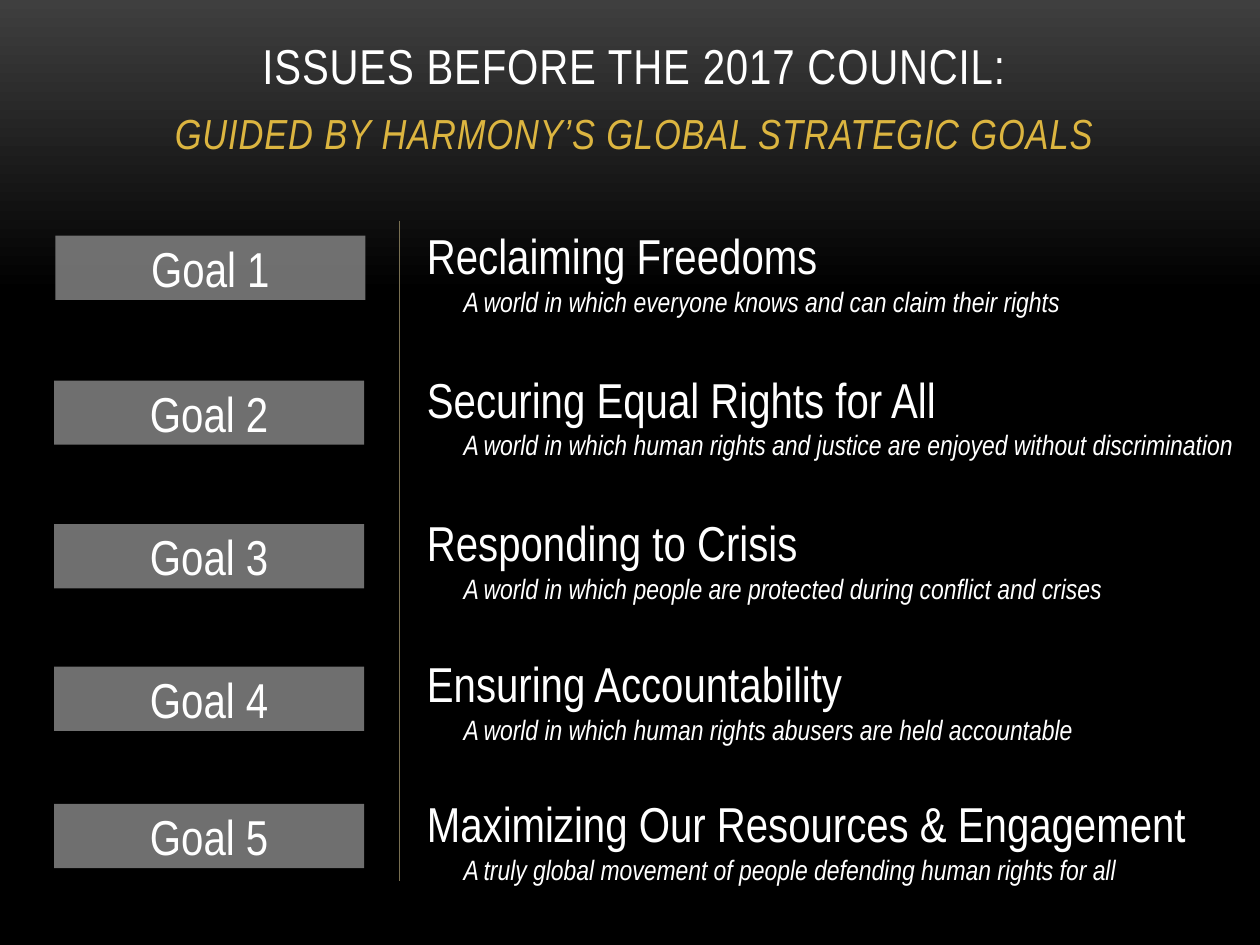
from lxml import etree
from pptx import Presentation
from pptx.dml.color import RGBColor
from pptx.enum.shapes import MSO_CONNECTOR, MSO_SHAPE
from pptx.enum.text import MSO_ANCHOR, PP_ALIGN
from pptx.oxml.ns import qn
from pptx.util import Inches, Pt

FONT = "Arial Narrow"
WHITE, GOLD, GRAY, RULE = "FFFFFF", "DCB540", "808080", "786F51"

# Bar top, text top, heading, description
GOALS = [
    (1.87, 1.74, "Reclaiming Freedoms",
     "A world in which everyone knows and can claim their rights"),
    (3.02, 2.88, "Securing Equal Rights for All",
     "A world in which human rights and justice are enjoyed without discrimination"),
    (4.16, 4.02, "Responding to Crisis",
     "A world in which people are protected during conflict and crises"),
    (5.29, 5.14, "Ensuring Accountability",
     "A world in which human rights abusers are held accountable"),
    (6.38, 6.25, "Maximizing Our Resources & Engagement",
     "A truly global movement of people defending human rights for all"),
]


def color(hex_value):
    return RGBColor.from_string(hex_value)


def add_run(paragraph, text, size, hex_value=WHITE, italic=False):
    run = paragraph.add_run()
    run.text = text
    run.font.name = FONT
    run.font.size = Pt(size)
    run.font.italic = italic
    run.font.color.rgb = color(hex_value)
    return run


def set_background(slide):
    fill = slide.background.fill
    fill.gradient()
    fill.gradient_angle = 270
    for stop, position, hex_value in zip(
            fill.gradient_stops, (0, 0.31), ("3F3F3F", "000000")):
        stop.position = position
        stop.color.rgb = color(hex_value)


def add_title(slide, left, top, width, height):
    title = slide.shapes.title
    title.left, title.top = Inches(left), Inches(top)
    title.width, title.height = Inches(width), Inches(height)
    frame = title.text_frame
    frame.word_wrap = True
    frame.vertical_anchor = MSO_ANCHOR.BOTTOM
    heading, subheading = frame.paragraphs[0], frame.add_paragraph()
    subheading.space_before = Pt(7)
    runs = [
        add_run(heading, "ISSUES BEFORE THE 2017 COUNCIL:", 28),
        add_run(subheading, "GUIDED BY HARMONY’S GLOBAL STRATEGIC GOALS",
                24, GOLD, italic=True),
    ]
    for paragraph in frame.paragraphs:
        paragraph.alignment = PP_ALIGN.CENTER
    for run in runs:
        run.font._element.set("spc", "50")  # letter spacing of 0.5 pt


def add_divider(slide, x, top, bottom):
    line = slide.shapes.add_connector(
        MSO_CONNECTOR.STRAIGHT, Inches(x), Inches(top), Inches(x), Inches(bottom))
    line.line.color.rgb = color(RULE)
    line.line.width = Pt(1)
    etree.SubElement(line._element.spPr, qn("a:effectLst"))


def add_goal_bar(slide, text, left, top, width, height):
    bar = slide.shapes.add_shape(
        MSO_SHAPE.RECTANGLE, Inches(left), Inches(top), Inches(width), Inches(height))
    bar.shadow.inherit = False
    bar.line.fill.background()
    bar.fill.solid()
    bar.fill.fore_color.rgb = color(GRAY)
    # Slight transparency
    fill_color = bar._element.spPr.find(qn("a:solidFill"))[0]
    etree.SubElement(fill_color, qn("a:alpha"), val="87000")
    bar.text_frame.vertical_anchor = MSO_ANCHOR.MIDDLE
    paragraph = bar.text_frame.paragraphs[0]
    paragraph.alignment = PP_ALIGN.CENTER
    add_run(paragraph, text, 28)


def add_goal_text(slide, heading, description, left, top, width, height):
    box = slide.shapes.add_textbox(
        Inches(left), Inches(top), Inches(width), Inches(height))
    frame = box.text_frame
    frame.word_wrap = True
    add_run(frame.paragraphs[0], heading, 28)
    paragraph = frame.add_paragraph()
    paragraph._p.get_or_add_pPr().set("marL", str(Inches(0.29)))
    add_run(paragraph, description, 16, italic=True)


def main():
    presentation = Presentation()
    presentation.slide_width, presentation.slide_height = Inches(10), Inches(7.5)
    slide = presentation.slides.add_slide(presentation.slide_layouts[5])
    set_background(slide)
    add_title(slide, 0.4, 0.15, 9.27, 1.15)
    add_divider(slide, 3.17, 1.75, 6.99)
    # One bar and one text block per goal
    for number, (bar_top, text_top, heading, description) in enumerate(GOALS, 1):
        bar_left = 0.44 if number == 1 else 0.43
        add_goal_bar(slide, f"Goal {number}", bar_left, bar_top, 2.46, 0.51)
        add_goal_text(slide, heading, description, 3.29, text_top, 6.71, 0.84)
    presentation.save("out.pptx")


if __name__ == "__main__":
    main()
